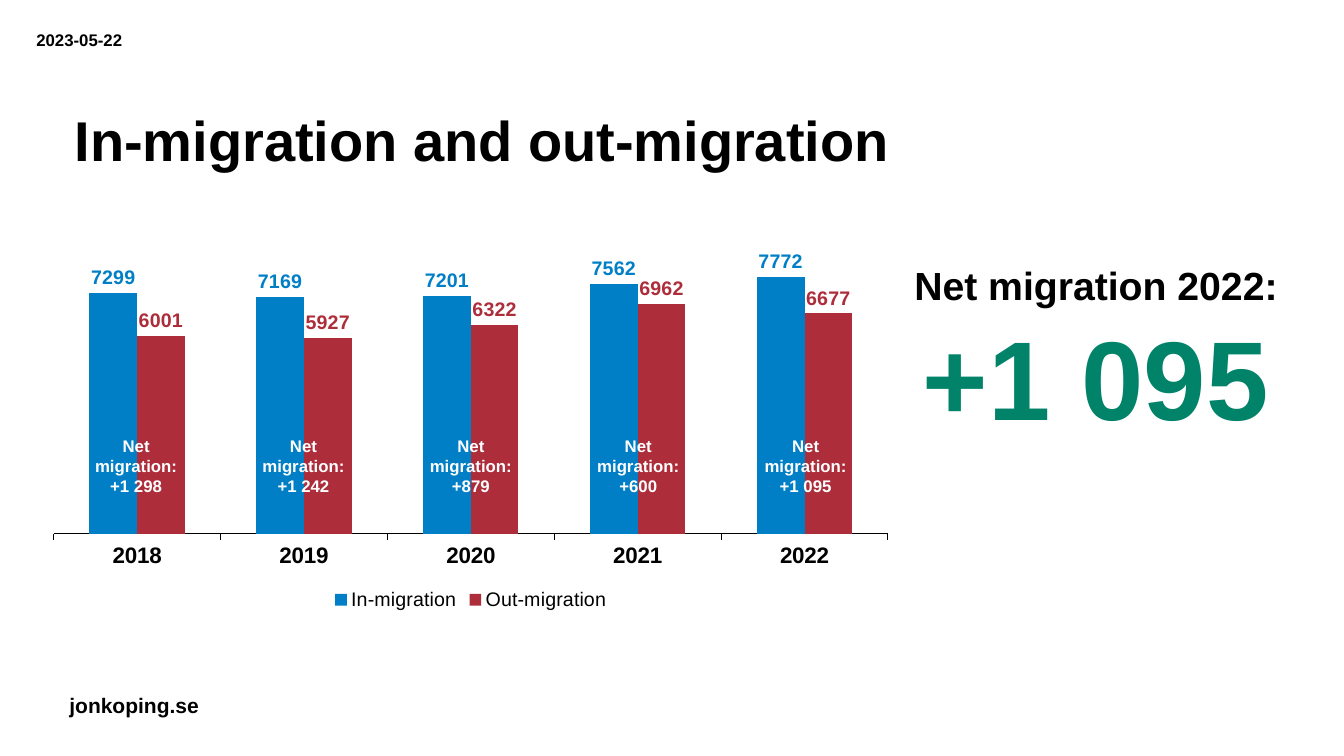
from pptx import Presentation
from pptx.chart.data import CategoryChartData
from pptx.dml.color import RGBColor
from pptx.enum.chart import XL_CHART_TYPE, XL_LABEL_POSITION, XL_LEGEND_POSITION, XL_TICK_MARK
from pptx.enum.text import MSO_ANCHOR, PP_ALIGN
from pptx.oxml import parse_xml
from pptx.util import Pt

COLUMNS = XL_CHART_TYPE.COLUMN_CLUSTERED
OUTSIDE_END = XL_LABEL_POSITION.OUTSIDE_END
BOTTOM_LEGEND = XL_LEGEND_POSITION.BOTTOM
TICK_OUTSIDE = XL_TICK_MARK.OUTSIDE
TICK_NONE = XL_TICK_MARK.NONE
TOP, BOTTOM = MSO_ANCHOR.TOP, MSO_ANCHOR.BOTTOM
LEFT, CENTER = PP_ALIGN.LEFT, PP_ALIGN.CENTER

FONT = "Arial"
BLACK, WHITE, GREEN = "000000", "FFFFFF", "008369"
TITLE = "In-migration and out-migration"
DATE = "2023-05-22"
SITE = "jonkoping.se"
YEARS = ["2018", "2019", "2020", "2021", "2022"]
SERIES = [
    ("In-migration", [7299, 7169, 7201, 7562, 7772], "007FC7"),
    ("Out-migration", [6001, 5927, 6322, 6962, 6677], "AD2D3A"),
]
PLOT_LAYOUT = {"x": 0.02, "y": 0.02, "w": 0.96, "h": 0.77}
AXIS_MAXIMUM = 9000
NET_LEFT, NET_PITCH = 81, 166
EMU_PER_PX = 9144
INSETS = (10, 5, 10, 5)
NO_INSETS = (0, 0, 0, 0)


def px(*lengths):
    return [length * EMU_PER_PX for length in lengths]


def color(value):
    return RGBColor.from_string(value)


def style(font, size, value, bold=True):
    font.name = FONT
    font.size = Pt(size)
    font.bold = bold
    font.color.rgb = color(value)


def fill_text(box, lines, align=LEFT, insets=INSETS, wrap=True, anchor=TOP):
    frame = box.text_frame
    frame.word_wrap = wrap
    frame.vertical_anchor = anchor
    (frame.margin_left, frame.margin_top,
     frame.margin_right, frame.margin_bottom) = px(*insets)
    frame.text = "\n".join(text for text, size, value in lines)
    for para, (text, size, value) in zip(frame.paragraphs, lines):
        para.alignment = align
        style(para.font, size, value)


def add_text(slide, place, lines, **options):
    fill_text(slide.shapes.add_textbox(*px(*place)), lines, **options)


def add_title(slide):
    title = slide.shapes.title
    title.left, title.top, title.width, title.height = px(74, 50, 1184, 122)
    fill_text(title, [(TITLE, 40, BLACK)], insets=NO_INSETS, anchor=BOTTOM)
    title.text_frame.paragraphs[0].line_spacing = 0.9


def set_plot_layout(chart):
    plot_area = chart.plots[0]._element.getparent()
    for layout in plot_area.findall("{*}layout"):
        plot_area.remove(layout)
    sizes = "".join(f'<c:{key} val="{value}"/>' for key, value in PLOT_LAYOUT.items())
    plot_area.insert(0, parse_xml(
        '<c:layout xmlns:c="http://schemas.openxmlformats.org/drawingml/2006/chart">'
        '<c:manualLayout><c:layoutTarget val="inner"/>'
        '<c:xMode val="edge"/><c:yMode val="edge"/>'
        f'{sizes}</c:manualLayout></c:layout>'))


def add_migration_chart(slide):
    data = CategoryChartData()
    data.categories = YEARS
    for name, values, value_color in SERIES:
        data.add_series(name, values)
    chart = slide.shapes.add_chart(COLUMNS, *px(36, 227, 862, 383), data).chart
    style(chart.font, 10, BLACK, bold=False)
    chart.has_title = False
    chart.has_legend = True
    chart.legend.position = BOTTOM_LEGEND
    chart.legend.include_in_layout = False
    style(chart.legend.font, 14, BLACK, bold=False)

    years = chart.category_axis
    years.major_tick_mark = TICK_OUTSIDE
    years.minor_tick_mark = TICK_NONE
    years.format.line.color.rgb = color(BLACK)
    years.format.line.width = Pt(0.75)
    style(years.tick_labels.font, 16, BLACK)
    people = chart.value_axis
    people.minimum_scale, people.maximum_scale = 0, AXIS_MAXIMUM
    people.has_major_gridlines = False
    people.visible = False

    plot = chart.plots[0]
    plot.gap_width, plot.overlap = 150, 0
    plot.vary_by_categories = False
    for series, (name, values, value_color) in zip(plot.series, SERIES):
        series.format.fill.solid()
        series.format.fill.fore_color.rgb = color(value_color)
        labels = series.data_labels
        labels.show_value = True
        labels.position = OUTSIDE_END
        style(labels.font, 14, value_color)
    set_plot_layout(chart)


def signed(number):
    return f"{number:+,}".replace(",", " ")


def main():
    deck = Presentation()
    deck.slide_width, deck.slide_height = px(1333, 750)
    slide = deck.slides.add_slide(deck.slide_layouts[5])
    add_text(slide, (59, 682, 150, 35), [(SITE, 15, BLACK)], wrap=False)
    add_text(slide, (36, 30, 98, 20), [(DATE, 12, BLACK)], insets=NO_INSETS)
    add_title(slide)
    add_migration_chart(slide)

    arrivals, departures = (values for name, values, value_color in SERIES)
    nets = [signed(came - left) for came, left in zip(arrivals, departures)]
    for index, net in enumerate(nets):
        add_text(slide, (NET_LEFT + index * NET_PITCH, 427, 108, 71),
                 [("Net migration:", 12, WHITE), (net, 12, WHITE)], align=CENTER)
    add_text(slide, (889, 254, 396, 192),
             [(f"Net migration {YEARS[-1]}:", 28, BLACK), (nets[-1], 80, GREEN)],
             align=CENTER, wrap=False)
    deck.save("out.pptx")


if __name__ == "__main__":
    main()
